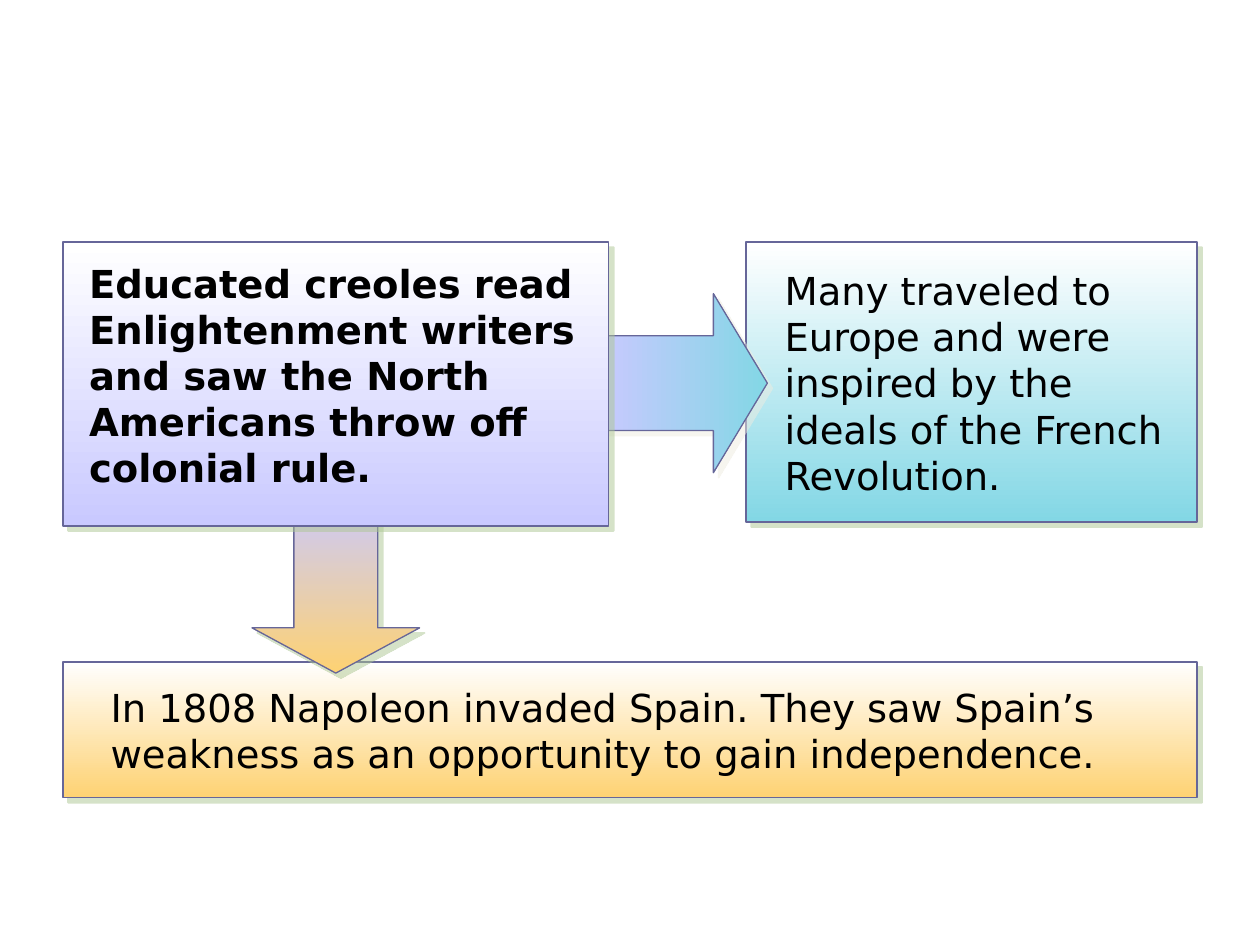
from lxml import etree
from pptx import Presentation
from pptx.dml.color import RGBColor
from pptx.enum.shapes import MSO_SHAPE
from pptx.enum.text import MSO_AUTO_SIZE
from pptx.oxml.ns import qn
from pptx.util import Cm, Pt

RECT = MSO_SHAPE.RECTANGLE
RIGHT = MSO_SHAPE.RIGHT_ARROW
DOWN = MSO_SHAPE.DOWN_ARROW
GROW = MSO_AUTO_SIZE.SHAPE_TO_FIT_TEXT

FONT = "DejaVu Sans"
COLORS = {
    "white": "FFFFFF",
    "lilac": "C9C9FF",
    "teal": "83D7E5",
    "amber": "FED273",
    "outline": "666699",
    "green_shadow": "ADC793",
    "pale_shadow": "EEECE1",
    "text": "000000",
}
DOWNWARD, RIGHTWARD = 270, 0

LEFT, RIGHT_EDGE, TOP = 1.27, 24.13, 4.88
EUROPE_LEFT = 15.04

SPAIN = {
    "box": (LEFT, 13.34, RIGHT_EDGE - LEFT, 2.74), "color": "amber",
    "label": (1.98, 13.67, 22.12, 2.11), "bold": False,
    "text": "In 1808 Napoleon invaded Spain. They saw Spain’s weakness "
            "as an opportunity to gain independence.",
}
EUROPE = {
    "box": (EUROPE_LEFT, TOP, RIGHT_EDGE - EUROPE_LEFT, 5.64), "color": "teal",
    "label": (15.57, 5.26, 8.79, 4.9), "bold": False,
    "text": "Many traveled to Europe and were inspired by the ideals "
            "of the French Revolution.",
}
CREOLES = {
    "box": (LEFT, TOP, 11, 5.72), "color": "lilac",
    "label": (1.55, 5.11, 10.8, 4.9), "bold": True,
    "text": "Educated creoles read Enlightenment writers and saw the North "
            "Americans throw off colonial rule.",
}
ARROWS = [
    (RIGHT, (12.07, 5.92, 3.4, 3.61), (0.53, 0.32), "teal", RIGHTWARD, "pale_shadow"),
    (DOWN, (5.08, 9.96, 3.38, 3.61), (0.5, 0.27), "amber", DOWNWARD, "green_shadow"),
]


def rgb(name):
    return RGBColor.from_string(COLORS[name])


def add_shadow(sp, color):
    sp.shadow.inherit = False
    effects = sp._element.spPr.find(qn("a:effectLst"))
    shadow = etree.SubElement(effects, qn("a:outerShdw"), blurRad="0",
                              dist=str(Pt(4.2)), dir="2700000",
                              algn="ctr", rotWithShape="0")
    clr = etree.SubElement(shadow, qn("a:srgbClr"), val=COLORS[color])
    etree.SubElement(clr, qn("a:alpha"), val="50000")


def add_gradient_shape(shapes, kind, place, start, end, angle, width, shadow):
    sp = shapes.add_shape(kind, *map(Cm, place))
    sp.fill.gradient()
    sp.fill.gradient_angle = angle
    for stop, color in zip(sp.fill.gradient_stops, (start, end)):
        stop.color.rgb = rgb(color)
    sp.line.color.rgb = rgb("outline")
    sp.line.width = Pt(width)
    add_shadow(sp, shadow)
    return sp


def add_step(shapes, step):
    add_gradient_shape(shapes, RECT, step["box"], "white", step["color"],
                       DOWNWARD, 1, "green_shadow")
    tf = shapes.add_textbox(*map(Cm, step["label"])).text_frame
    tf.word_wrap = True
    tf.auto_size = GROW
    tf.text = step["text"]
    font = tf.paragraphs[0].runs[0].font
    font.name = FONT
    font.size = Pt(22)
    font.bold = step["bold"]
    font.color.rgb = rgb("text")


def main():
    prs = Presentation()
    prs.slide_width, prs.slide_height = Cm(25.4), Cm(19.05)
    s = prs.slides.add_slide(prs.slide_layouts[6])
    for step in (SPAIN, EUROPE):
        add_step(s.shapes.add_group_shape().shapes, step)
    for kind, place, adjustments, color, angle, shadow in ARROWS:
        sp = add_gradient_shape(s.shapes, kind, place, "lilac", color,
                                angle, 0.75, shadow)
        for i, value in enumerate(adjustments):
            sp.adjustments[i] = value
    add_step(s.shapes, CREOLES)
    prs.save("out.pptx")


if __name__ == "__main__":
    main()
